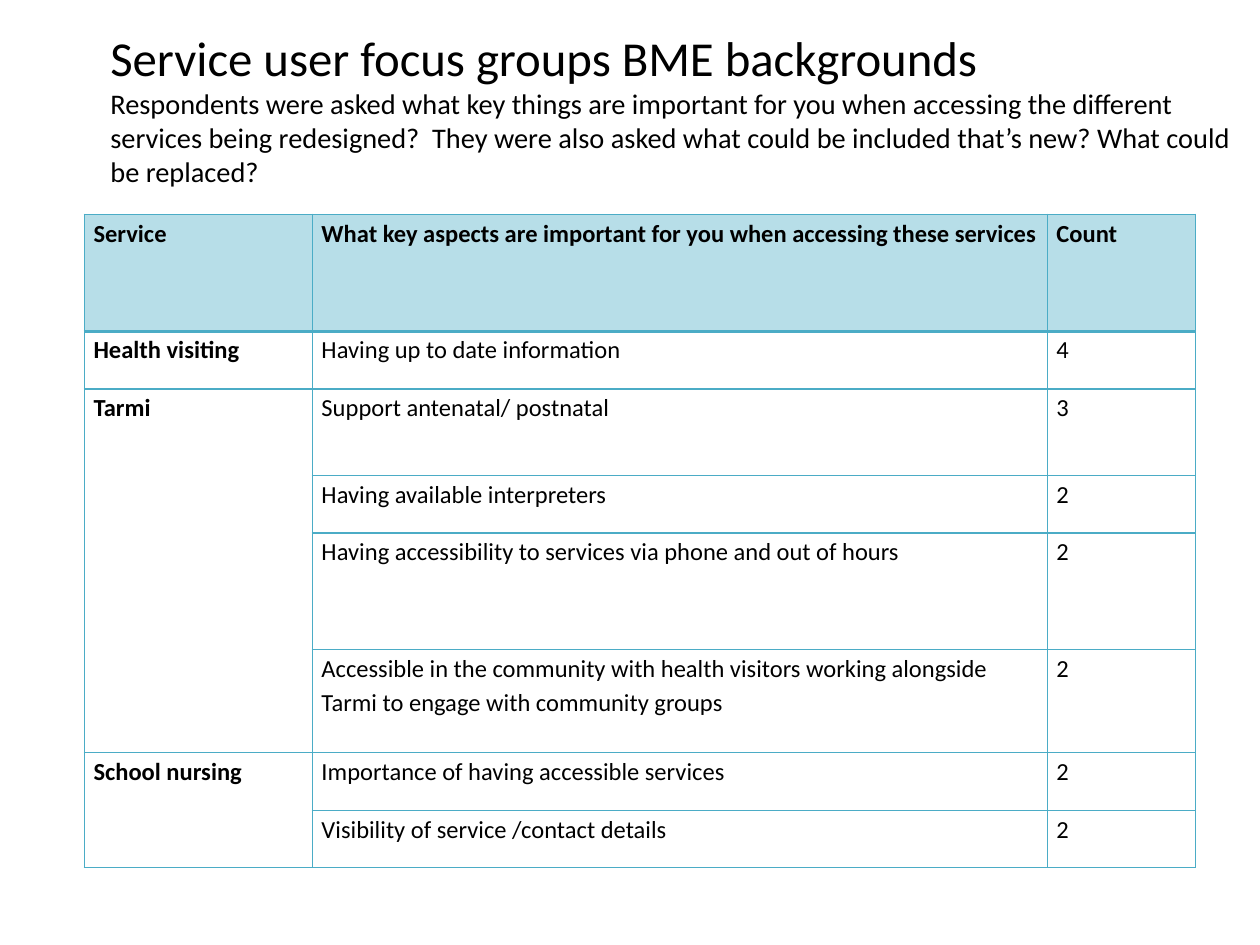
from lxml import etree
from pptx import Presentation
from pptx.dml.color import RGBColor
from pptx.enum import text
from pptx.oxml import ns
from pptx.util import Pt

BLACK = RGBColor(0x00, 0x00, 0x00)
TEAL = RGBColor(0x4B, 0xAC, 0xC6)
PALE_TEAL = RGBColor(0xB7, 0xDE, 0xE8)
WHITE = RGBColor(0xFF, 0xFF, 0xFF)
FONT = "Calibri"

HEADER = ("Service", "What key aspects are important for you when accessing these services", "Count")
SERVICES = [
    ("Health visiting", [("Having up to date information", 4)]),
    ("Tarmi", [
        ("Support antenatal/ postnatal", 3),
        ("Having available interpreters", 2),
        ("Having accessibility to services via phone and out of hours", 2),
        ("Accessible in the community with health visitors working alongside "
         "Tarmi to engage with community groups", 2),
    ]),
    ("School nursing", [
        ("Importance of having accessible services", 2),
        ("Visibility of service /contact details", 2),
    ]),
]
COLUMN_WIDTHS = (130.3, 420, 84.7)
ROW_HEIGHTS = (66.7, 33, 49.5, 33, 66.6, 58.8, 33, 32.6)


def add_border(cell, side, width):
    """Draw one side ("L", "R", "T" or "B") of a cell; call before filling it."""
    line = etree.SubElement(cell._tc.get_or_add_tcPr(), ns.qn(f"a:ln{side}"), w=str(Pt(width)))
    fill = etree.SubElement(line, ns.qn("a:solidFill"))
    etree.SubElement(fill, ns.qn("a:srgbClr"), val=str(TEAL))


def fill_cell(cell, wording, bold, header, top_width):
    cell.margin_left = cell.margin_right = Pt(5.2)
    cell.margin_top = cell.margin_bottom = 0
    widths = {"L": 1, "R": 1, "T": top_width, "B": 2 if header else 1}
    for side, width in widths.items():
        add_border(cell, side, width)
    cell.fill.solid()
    cell.fill.fore_color.rgb = PALE_TEAL if header else WHITE
    cell.text = wording
    paragraph = cell.text_frame.paragraphs[0]
    paragraph.line_spacing = 1.15
    paragraph.font.name = FONT
    paragraph.font.size = Pt(14)
    paragraph.font.bold = bold
    paragraph.font.color.rgb = BLACK


deck = Presentation()
deck.slide_width, deck.slide_height = Pt(720), Pt(540)
slide = deck.slides.add_slide(deck.slide_layouts[6])

heading = slide.shapes.add_textbox(Pt(56), Pt(26), Pt(664), Pt(90)).text_frame
heading.word_wrap = True
heading.auto_size = text.MSO_AUTO_SIZE.NONE
heading.vertical_anchor = text.MSO_ANCHOR.MIDDLE
heading.margin_top, heading.margin_bottom = 0, Pt(18.5)
title, question = heading.paragraphs[0], heading.add_paragraph()
title.text = "Service user focus groups BME backgrounds"
question.text = (
    "Respondents were asked what key things are important for you when accessing the different "
    "services being redesigned?  They were also asked what could be included that’s new? "
    "What could be replaced?"
)
for paragraph, size in ((title, 27.9), (question, 16.2)):
    paragraph.font.name = FONT
    paragraph.font.size = Pt(size)
    paragraph.font.color.rgb = BLACK

table = slide.shapes.add_table(
    len(ROW_HEIGHTS), len(COLUMN_WIDTHS),
    Pt(48.25), Pt(122.5), Pt(sum(COLUMN_WIDTHS)), Pt(sum(ROW_HEIGHTS)),
).table
for column, width in zip(table.columns, COLUMN_WIDTHS):
    column.width = Pt(width)
for row, height in zip(table.rows, ROW_HEIGHTS):
    row.height = Pt(height)

lines = [HEADER]
for service, aspects in SERVICES:
    first = len(lines)
    for index, (aspect, count) in enumerate(aspects):
        lines.append(("" if index else service, aspect, str(count)))
    if len(aspects) > 1:
        table.cell(first, 0).merge(table.cell(len(lines) - 1, 0))

for r, line in enumerate(lines):
    for c, wording in enumerate(line):
        fill_cell(table.cell(r, c), wording, bold=r == 0 or c == 0,
                  header=r == 0, top_width=2 if r == 1 else 1)

deck.save("out.pptx")
